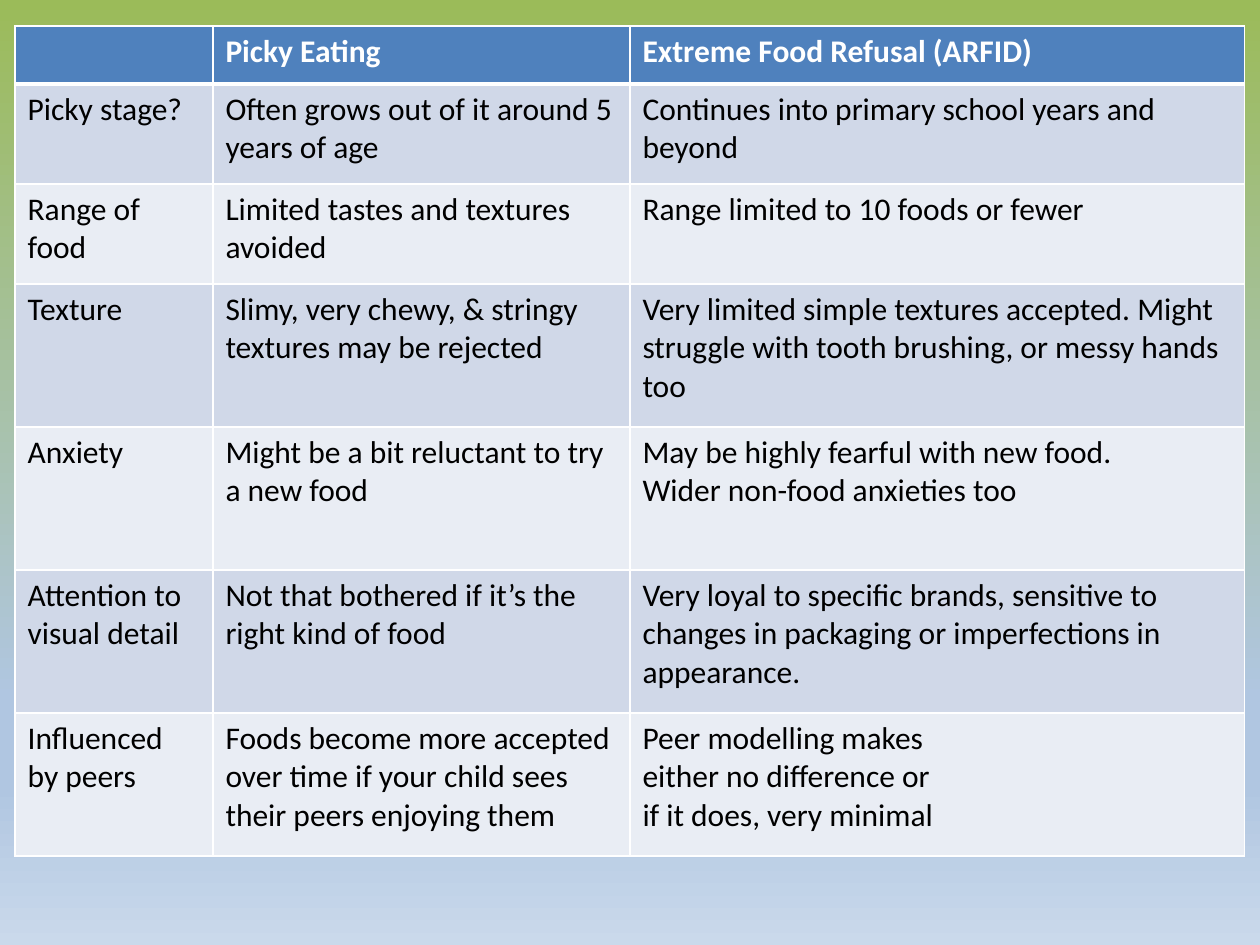
from lxml.etree import SubElement
from pptx import Presentation
from pptx.dml.color import RGBColor
from pptx.oxml.ns import qn
from pptx.util import Pt

COLOURS = {
    "header": "4F81BD",
    "odd": "D0D8E8",
    "even": "E9EDF4",
    "white": "FFFFFF",
    "black": "000000",
}
BACKGROUND_STOPS = [(0, "9BBB59"), (74, "B0C6E1"), (83, "B0C6E1"), (100, "CAD9EB")]
COLUMN_WIDTHS = [113.1, 238.3, 351.3]
ROW_HEIGHTS = [33.1] + [57.1] * 2 + [81.7] * 4
HEADER_FONT = {"name": "Calibri", "size": Pt(18), "bold": True}
BODY_FONT = {**HEADER_FONT, "bold": False}
ROWS = [
    ["", "Picky Eating", "Extreme Food Refusal (ARFID)"],
    ["Picky stage?", "Often grows out of it around 5 years of age",
     "Continues into primary school years and beyond"],
    ["Range of food", "Limited tastes and textures avoided",
     "Range limited to 10 foods or fewer"],
    ["Texture", "Slimy, very chewy, & stringy textures may be rejected",
     "Very limited simple textures accepted. Might struggle with tooth brushing, "
     "or messy hands too"],
    ["Anxiety", "Might be a bit reluctant to try a new food",
     "May be highly fearful with new food.\nWider non-food anxieties too"],
    ["Attention to visual detail", "Not that bothered if it’s the right kind of food",
     "Very loyal to specific brands, sensitive to changes in packaging "
     "or imperfections in appearance."],
    ["Influenced by peers",
     "Foods become more accepted over time if your child sees their peers enjoying them",
     "Peer modelling makes\neither no difference or\nif it does, very minimal"],
]


def add_solid(parent, colour):
    """Append a solid fill to an XML element."""
    SubElement(SubElement(parent, qn("a:solidFill")), qn("a:srgbClr"), val=colour)


def paint_background(page):
    """Fill the page with a gradient running from top to bottom."""
    fill = page.background.fill
    fill.gradient()
    fill.gradient_angle = 270
    stops = next(page.element.iter(qn("a:gsLst")))
    for stop in list(stops):
        stops.remove(stop)
    for position, colour in BACKGROUND_STOPS:
        stop = SubElement(stops, qn("a:gs"), pos=str(position * 1000))
        SubElement(stop, qn("a:srgbClr"), val=colour)


def add_borders(cell, row_index):
    """Draw white borders, thicker between the header and the body."""
    widths = {
        "lnL": 1,
        "lnR": 1,
        "lnT": 3 if row_index == 1 else 1,
        "lnB": 3 if row_index == 0 else 1,
    }
    properties = cell._tc.get_or_add_tcPr()
    for side, width in widths.items():
        line = SubElement(properties, qn(f"a:{side}"), w=str(Pt(width)))
        add_solid(line, COLOURS["white"])


def format_cell(cell, text, row_index):
    """Write and style one table cell."""
    is_header = row_index == 0
    shade = "header" if is_header else "odd" if row_index % 2 else "even"
    add_borders(cell, row_index)
    cell.fill.solid()
    cell.fill.fore_color.rgb = RGBColor.from_string(COLOURS[shade])
    cell.text = text
    ink = RGBColor.from_string(COLOURS["white" if is_header else "black"])
    for para in cell.text_frame.paragraphs:
        for name, value in (HEADER_FONT if is_header else BODY_FONT).items():
            setattr(para.font, name, value)
        para.font.color.rgb = ink
        for span in para.runs:
            for name, value in (HEADER_FONT if is_header else BODY_FONT).items():
                setattr(span.font, name, value)
            span.font.color.rgb = ink


def add_comparison_table(page):
    """Add the table comparing picky eating with extreme food refusal."""
    table = page.shapes.add_table(
        len(ROWS), len(COLUMN_WIDTHS), Pt(8.6), Pt(15),
        Pt(sum(COLUMN_WIDTHS)), Pt(sum(ROW_HEIGHTS)),
    ).table
    for column, width in zip(table.columns, COLUMN_WIDTHS):
        column.width = Pt(width)
    for row_index, (row, height) in enumerate(zip(table.rows, ROW_HEIGHTS)):
        row.height = Pt(height)
        for cell, text in zip(row.cells, ROWS[row_index]):
            format_cell(cell, text, row_index)


def main():
    """Build and save the deck."""
    deck = Presentation()
    deck.slide_width, deck.slide_height = Pt(720), Pt(540)
    page = deck.slides.add_slide(deck.slide_layouts[6])
    paint_background(page)
    add_comparison_table(page)
    deck.save("out.pptx")


if __name__ == "__main__":
    main()
